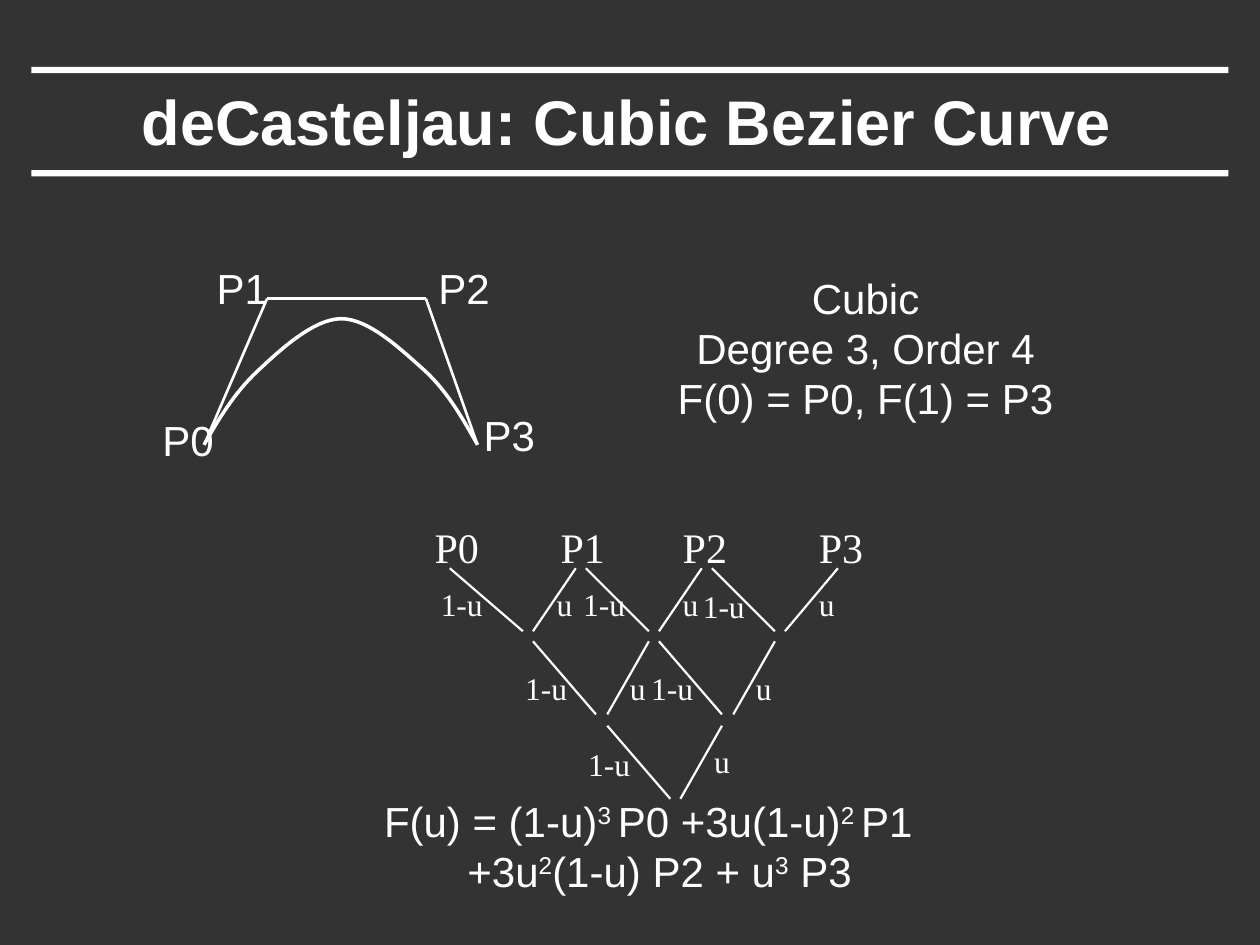
import math
import pptx
import pptx.util
import pptx.dml.color
import pptx.enum.shapes
import pptx.enum.text
import pptx.oxml.ns
import lxml.etree

Inches = pptx.util.Inches
HUES = {"back": "333333", "ink": "FFFFFF"}
SANS, SERIF = "Arial", "Times New Roman"
CURVE = [
    [(1.62, 3.53), (1.74, 3.32), (1.86, 3.12), (2.04, 2.95)],
    [(2.04, 2.95), (2.22, 2.78), (2.49, 2.53), (2.71, 2.53)],
    [(2.71, 2.53), (2.93, 2.53), (3.19, 2.78), (3.38, 2.95)],
    [(3.38, 2.95), (3.56, 3.12), (3.67, 3.32), (3.79, 3.53)],
]
ROWS = [
    (4.51, 5.01, [(3.57, 4.15), (4.57, 4.23), (4.65, 5.15),
                  (5.57, 5.23), (5.65, 6.15), (6.65, 6.23)]),
    (5.09, 5.67, [(4.23, 4.73), (5.15, 4.82), (5.23, 5.73), (6.15, 5.82)]),
    (5.76, 6.34, [(4.82, 5.32), (5.73, 5.4)]),
]
LEFTS = [(3.4, 4.59), (4.53, 4.59), (5.48, 4.61),
         (4.07, 5.26), (5.07, 5.26), (4.57, 5.86)]
RIGHTS = [(4.32, 4.59), (5.32, 4.59), (6.4, 4.59),
          (4.9, 5.26), (5.9, 5.26), (5.57, 5.84)]


def color(name):
    """Return the named colour."""
    return pptx.dml.color.RGBColor.from_string(HUES[name])


def bar(slide, top):
    """Draw a full-width rule."""
    kind = pptx.enum.shapes.MSO_SHAPE.RECTANGLE
    rule = slide.shapes.add_shape(kind, Inches(0.25), Inches(top), Inches(9.5), Inches(0.05))
    rule.shadow.inherit = False
    rule.fill.solid()
    rule.fill.fore_color.rgb = color("ink")
    rule.line.fill.background()


def label(slide, at, lines, size, font=SANS, bold=False, center=False):
    """Write lines of text, with carets around superscripts."""
    box = slide.shapes.add_textbox(*map(Inches, at))
    frame = box.text_frame
    frame.word_wrap = False
    frame.vertical_anchor = pptx.enum.text.MSO_ANCHOR.MIDDLE
    align = pptx.enum.text.PP_ALIGN
    for i, line in enumerate(lines):
        para = frame.add_paragraph() if i else frame.paragraphs[0]
        para.alignment = align.CENTER if center else align.LEFT
        for j, part in enumerate(line.split("^")):
            if not part:
                continue
            run = para.add_run()
            run.text = part
            run.font.size = pptx.util.Pt(size)
            run.font.name = font
            run.font.bold = bold
            run.font.color.rgb = color("ink")
            if j % 2:
                run.font._element.set("baseline", "30000")
    return frame


def link(slide, start, end, width):
    """Draw a straight line between two points."""
    kind = pptx.enum.shapes.MSO_CONNECTOR.STRAIGHT
    line = slide.shapes.add_connector(kind, *map(Inches, (*start, *end)))
    line.line.color.rgb = color("ink")
    line.line.width = pptx.util.Pt(width)
    lxml.etree.SubElement(line._element.spPr, pptx.oxml.ns.qn("a:effectLst"))


def point(poles, u):
    """Evaluate a Bezier segment at u, as slide lengths."""
    n = len(poles) - 1
    mix = [math.comb(n, i) * u**i * (1 - u)**(n - i) for i in range(n + 1)]
    return tuple(Inches(sum(m * p[k] for m, p in zip(mix, poles))) for k in (0, 1))


def curve(slide, parts, steps=16):
    """Draw joined Bezier segments as one open outline."""
    dots = [point(part, i / steps) for part in parts for i in range(1, steps + 1)]
    pen = slide.shapes.build_freeform(*point(parts[0], 0))
    pen.add_line_segments(dots, close=False)
    arc = pen.convert_to_shape()
    arc.shadow.inherit = False
    arc.fill.background()
    arc.line.color.rgb = color("ink")
    arc.line.width = pptx.util.Pt(2)


def hull(slide):
    """Draw the control polygon, its curve and its point names."""
    poles = [(1.62, 3.53), (2.12, 2.37), (3.38, 2.37), (3.79, 3.53)]
    for start, end in zip(poles, poles[1:]):
        link(slide, start, end, 1.5)
    spots = [(1.19, 3.24), (1.62, 2.03), (3.38, 2.03), (3.74, 3.2)]
    for i, spot in enumerate(spots):
        label(slide, (*spot, 0.61, 0.5), [f"P{i}"], 24)
    curve(slide, CURVE)


def mesh(slide):
    """Draw the triangle of blends with its weights."""
    for i, left in enumerate((3.35, 4.35, 5.32, 6.4)):
        label(slide, (left, 4.09, 0.55, 0.5), [f"P{i}"], 24, SERIF)
    for top, base, pairs in ROWS:
        for start, end in pairs:
            link(slide, (start, top), (end, base), 1.25)
    for text, width, spots in (("1-u", 0.53, LEFTS), ("u", 0.33, RIGHTS)):
        for spot in spots:
            label(slide, (*spot, width, 0.4), [text], 18, SERIF)


def main():
    """Build and save the slide."""
    deck = pptx.Presentation()
    deck.slide_width, deck.slide_height = Inches(10), Inches(7.5)
    slide = deck.slides.add_slide(deck.slide_layouts[6])
    slide.background.fill.solid()
    slide.background.fill.fore_color.rgb = color("back")
    for top in (0.53, 1.35):
        bar(slide, top)
    label(slide, (0.74, 0.58, 8.47, 0.75), ["deCasteljau: Cubic Bezier Curve"],
          36, bold=True, center=True)
    hull(slide)
    label(slide, (5.28, 2.11, 3.18, 1.3),
          ["Cubic", "Degree 3, Order 4", "F(0) = P0, F(1) = P3"], 24, center=True)
    mesh(slide)
    sums = label(slide, (2.92, 6.26, 4.45, 0.9),
                 ["F(u) = (1-u)^3 ^P0 +3u(1-u)^2 ^P1", "+3u^2^(1-u) P2 + u^3^ P3"],
                 24, center=True)
    sums.paragraphs[1]._p.get_or_add_pPr().set("marL", str(Inches(0.18)))
    deck.save("out.pptx")


if __name__ == "__main__":
    main()
